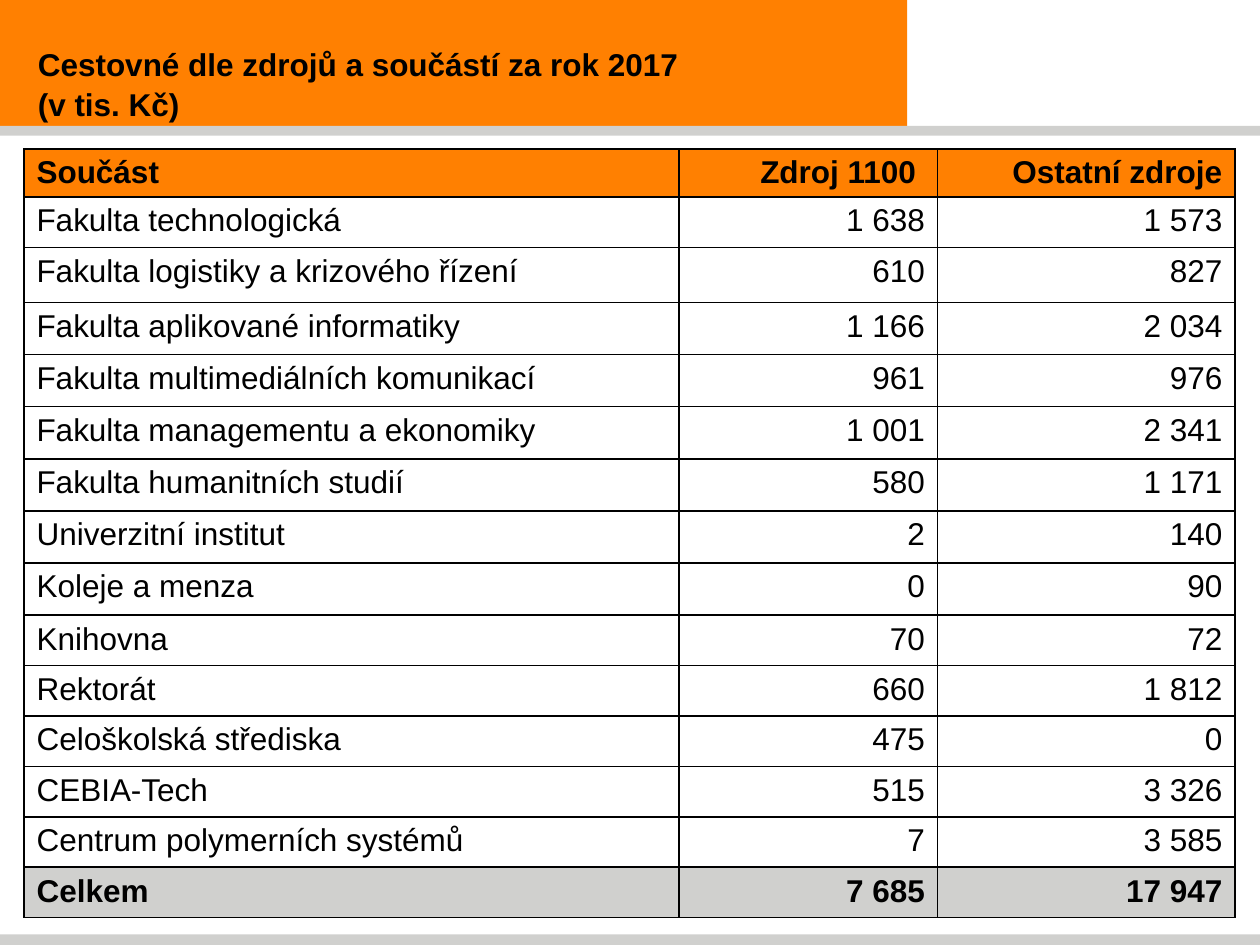
from dataclasses import dataclass

from lxml.etree import SubElement
from pptx import Presentation
from pptx.dml.color import RGBColor
from pptx.enum.shapes import MSO_SHAPE
from pptx.enum.text import MSO_ANCHOR, MSO_AUTO_SIZE, PP_ALIGN
from pptx.oxml import parse_xml
from pptx.oxml.ns import nsdecls, qn
from pptx.util import Pt


@dataclass
class Theme:
    font: str = "Arial"
    size: float = 18
    ink: str = "000000"
    accent: str = "FF8001"
    gray: str = "D0D0CE"
    rule: float = 1


HEAD = ["Součást", "Zdroj 1100 ", "Ostatní zdroje"]
ROWS = [
    ["Fakulta technologická", "1 638", "1 573"],
    ["Fakulta logistiky a krizového řízení", "610", "827"],
    ["Fakulta aplikované informatiky", "1 166", "2 034"],
    ["Fakulta multimediálních komunikací", "961", "976"],
    ["Fakulta managementu a ekonomiky", "1 001", "2 341"],
    ["Fakulta humanitních studií", "580", "1 171"],
    ["Univerzitní institut", "2", "140"],
    ["Koleje a menza", "0", "90"],
    ["Knihovna", "70", "72"],
    ["Rektorát", "660", "1 812"],
    ["Celoškolská střediska", "475", "0"],
    ["CEBIA-Tech", "515", "3 326"],
    ["Centrum polymerních systémů", "7", "3 585"],
]
TOTAL = ["Celkem", "7 685", "17 947"]
WIDTHS = [374.4, 147.6, 170]
HEIGHTS = [27.5, 28.8, 31.5] + [29.8] * 6 + [28.8] * 6


class Deck:
    def __init__(self, theme):
        self.theme = theme
        self.prs = Presentation()
        self.prs.slide_width, self.prs.slide_height = Pt(720), Pt(540)
        self.slide = self.prs.slides.add_slide(self.prs.slide_layouts[5])

    def band(self, left, top, width, height, color):
        box = self.slide.shapes.add_shape(
            MSO_SHAPE.RECTANGLE, Pt(left), Pt(top), Pt(width), Pt(height))
        box.shadow.inherit = False
        box.fill.solid()
        box.fill.fore_color.rgb = RGBColor.from_string(color)
        box.line.fill.background()

    def run(self, para, text, bold):
        run = para.add_run()
        run.text = text
        font = run.font
        font.name, font.size, font.bold = self.theme.font, Pt(self.theme.size), bold
        font.color.rgb = RGBColor.from_string(self.theme.ink)

    def indent(self, para, left, first):
        props = para._p.get_or_add_pPr()
        props.set("marL", str(Pt(left)))
        props.set("indent", str(Pt(first)))

    def title(self, lines, left, top, width, height):
        box = self.slide.shapes.title
        box.left, box.top, box.width, box.height = map(Pt, (left, top, width, height))
        frame = box.text_frame
        frame.word_wrap = True
        frame.auto_size = MSO_AUTO_SIZE.NONE
        frame.vertical_anchor = MSO_ANCHOR.MIDDLE
        para = frame.paragraphs[0]
        para.alignment = PP_ALIGN.LEFT
        para.line_spacing = 1.05
        self.indent(para, 14.4, 0)
        for i, line in enumerate(lines):
            if i:
                para.add_line_break()
            self.run(para, line, True)
        # Bring the title in front of the bands
        self.slide.shapes._spTree.append(box._element)

    def border(self, cell):
        props = cell._tc.get_or_add_tcPr()
        for i, side in enumerate("LRTB"):
            line = parse_xml(f'<a:ln{side} {nsdecls("a")} w="{Pt(self.theme.rule)}"/>')
            fill = SubElement(line, qn("a:solidFill"))
            SubElement(fill, qn("a:srgbClr"), val=self.theme.ink)
            props.insert(i, line)

    def cell(self, cell, text, right, bold, color):
        if color:
            cell.fill.solid()
            cell.fill.fore_color.rgb = RGBColor.from_string(color)
        else:
            cell.fill.background()
        self.border(cell)
        para = cell.text_frame.paragraphs[0]
        para.alignment = PP_ALIGN.RIGHT if right else PP_ALIGN.LEFT
        self.indent(para, 27, -27)
        self.run(para, text, bold)

    def table(self, rows, left, top, widths, heights):
        grid = self.slide.shapes.add_table(
            len(rows), len(widths), Pt(left), Pt(top),
            Pt(sum(widths)), Pt(sum(heights))).table
        grid.horz_banding = False
        for col, width in zip(grid.columns, widths):
            col.width = Pt(width)
        for row, height in zip(grid.rows, heights):
            row.height = Pt(height)
        fills = {0: self.theme.accent, len(rows) - 1: self.theme.gray}
        for r, row in enumerate(rows):
            for c, text in enumerate(row):
                self.cell(grid.cell(r, c), text, c > 0, r in fills, fills.get(r))


def main():
    theme = Theme()
    deck = Deck(theme)
    # Header and footer bands
    deck.band(0, 0, 518.4, 72, theme.accent)
    deck.band(0, 534, 720, 6, theme.gray)
    deck.band(0, 72, 720, 5.5, theme.gray)
    # Title
    deck.title(["Cestovné dle zdrojů a součástí za rok 2017", "(v tis. Kč)"],
               0, 23, 518.4, 49)
    # Travel costs by unit and source
    deck.table([HEAD, *ROWS, TOTAL], 13.7, 85, WIDTHS, HEIGHTS)
    deck.prs.save("out.pptx")


if __name__ == "__main__":
    main()
